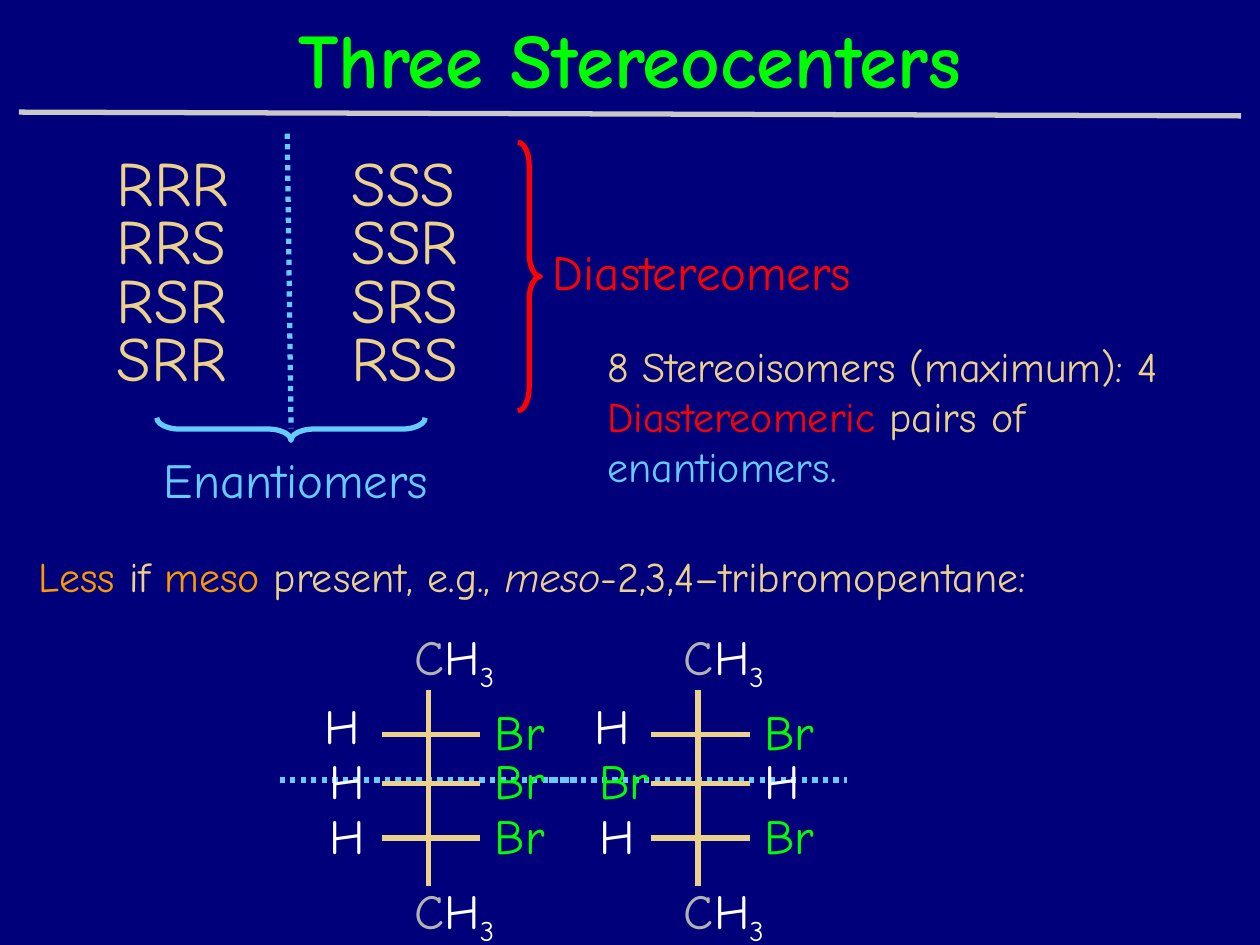
import dataclasses

import pptx
import pptx.dml.color
import pptx.enum.dml
import pptx.enum.shapes
import pptx.enum.text
import pptx.util
from lxml import etree

COLUMNS, ROWS = 100, 75
UNIT = pptx.util.Inches(10) / COLUMNS
DRAWING_NS = "http://schemas.openxmlformats.org/drawingml/2006/main"


@dataclasses.dataclass(frozen=True)
class Theme:
    font: str = "Comic Neue"
    background: str = "00007A"
    body: str = "EBD189"
    green: str = "00FF00"
    red: str = "FF0000"
    blue: str = "66CCFF"
    orange: str = "FF9900"
    white: str = "FFFFFF"
    carbon: str = "B2B2B2"
    rule: str = "C9C9C9"
    title_size: int = 44
    isomer_size: int = 36
    label_size: int = 28
    text_size: int = 24
    stroke: int = 3


THEME = Theme()


@dataclasses.dataclass(frozen=True)
class Box:
    """A region measured in grid columns and rows."""
    left: float
    top: float
    width: float
    height: float

    def inner(self, left, top, width, height):
        return Box(self.left + left, self.top + top, width, height)

    def point(self, x, y):
        return grid(self.left + x), grid(self.top + y)

    def emu(self):
        return [grid(v) for v in (self.left, self.top, self.width, self.height)]


def grid(cells):
    return pptx.util.Emu(round(cells * UNIT))


def rgb(color):
    return pptx.dml.color.RGBColor.from_string(color)


def style_line(line, color):
    line.color.rgb = rgb(color)
    line.width = pptx.util.Pt(THEME.stroke)


def style_font(font, size, color):
    font.name = THEME.font
    font.size = pptx.util.Pt(size)
    font.color.rgb = rgb(color)


def add_text(shapes, box, size, color, *pieces):
    """Each piece is plain text or (text, colour, style), style being "", "italic" or "sub"."""
    frame = shapes.add_textbox(*box.emu()).text_frame
    frame.word_wrap = True
    frame.auto_size = pptx.enum.text.MSO_AUTO_SIZE.SHAPE_TO_FIT_TEXT
    paragraph = frame.paragraphs[0]
    style_font(paragraph.font, size, color)
    for piece in pieces:
        text, run_color, style = (piece, color, "") if isinstance(piece, str) else piece
        run = paragraph.add_run()
        run.text = text
        if run_color != color:
            run.font.color.rgb = rgb(run_color)
        if style == "italic":
            run.font.italic = True
        elif style == "sub":
            run._r.get_or_add_rPr().set("baseline", "-25000")


def add_line(shapes, box, start, end, color, dotted=False):
    connector = shapes.add_connector(
        pptx.enum.shapes.MSO_CONNECTOR.STRAIGHT, *box.point(*start), *box.point(*end))
    style_line(connector.line, color)
    if dotted:
        connector.line.dash_style = pptx.enum.dml.MSO_LINE.ROUND_DOT
    etree.SubElement(connector._element.spPr, f"{{{DRAWING_NS}}}effectLst")


def add_brace(shapes, box, color, pointing_down=False):
    brace = shapes.add_shape(pptx.enum.shapes.MSO_SHAPE.RIGHT_BRACE, *box.emu())
    brace.adjustments[0], brace.adjustments[1] = 1.01, 0.5
    brace.shadow.inherit = False
    brace.fill.background()
    style_line(brace.line, color)
    if pointing_down:
        brace.rotation = 90
        brace._element.spPr.xfrm.set("flipV", "1")


def header(slide, box):
    title = slide.shapes.title
    title.left, title.top, title.width, title.height = box.emu()
    frame = title.text_frame
    frame.text = "Three Stereocenters"
    frame.auto_size = pptx.enum.text.MSO_AUTO_SIZE.NONE
    frame.vertical_anchor = pptx.enum.text.MSO_ANCHOR.MIDDLE
    paragraph = frame.paragraphs[0]
    paragraph.alignment = pptx.enum.text.PP_ALIGN.CENTER
    style_font(paragraph.font, THEME.title_size, THEME.green)
    paragraph.font.bold = True
    add_line(slide.shapes, box, (-6, 10.6), (91, 10.9), THEME.rule)


def stereoisomers(slide, box):
    """Mirror-image pairs in two columns, with braces naming the relationships."""
    pairs = [("RRR", "SSS"), ("RRS", "SSR"), ("RSR", "SRS"), ("SRR", "RSS")]
    for row, pair in enumerate(pairs):
        for column, isomer in enumerate(pair):
            cell = box.inner(18.6 * column, 0.3 + 4.63 * row, 14, 7)
            add_text(slide.shapes, cell, THEME.isomer_size, THEME.body, isomer)
    add_line(slide.shapes, box, (14.5, 0), (14.8, 23.4), THEME.blue, dotted=True)
    add_brace(slide.shapes, box.inner(32.8, 0.7, 1.8, 21.3), THEME.red)
    add_text(slide.shapes, box.inner(34.6, 8.1, 48.6, 5.7),
             THEME.label_size, THEME.red, "Diastereomers")
    add_brace(slide.shapes, box.inner(13.9, 12.8, 1.8, 21.3), THEME.blue, pointing_down=True)
    add_text(slide.shapes, box.inner(3.7, 24.6, 27.5, 5.7),
             THEME.label_size, THEME.blue, "Enantiomers")


def isomer_count(slide, box):
    add_text(slide.shapes, box, THEME.text_size, THEME.body,
             "8 Stereoisomers (maximum): 4 ", ("Diastereomeric", THEME.red, ""),
             " pairs of ", ("enantiomers.", THEME.blue, ""))


def meso_note(slide, box):
    add_text(slide.shapes, box, THEME.text_size, THEME.body,
             ("Less", THEME.orange, ""), " if ", ("meso", THEME.orange, ""),
             " present, e.g., ", ("meso", THEME.body, "italic"), "-2,3,4–tribromopentane:")


def fischer_projection(slide, box, substituents):
    """Substituents are (left, right) atoms for each stereocenter, from the top."""
    shapes = slide.shapes.add_group_shape().shapes
    atom_colors = {"H": THEME.white, "Br": THEME.green}
    bond_rows = (9.1, 13, 17.3)
    label_rows = ((5.5, 6), (9.9, 9.9), (14.2, 14.2))
    left_columns = (2.6, 3, 3)

    add_line(shapes, box, (0, 12.7), (23.6, 12.7), THEME.blue, dotted=True)
    add_line(shapes, box, (11.8, 5.6), (11.8, 21.1), THEME.body)
    for top in (0, 20.2):
        add_text(shapes, box.inner(9.7, top, 10.5, 5.7), THEME.label_size, THEME.white,
                 ("C", THEME.carbon, ""), "H", ("3", THEME.white, "sub"))
    for atoms, bond, tops, left in zip(substituents, bond_rows, label_rows, left_columns):
        add_line(shapes, box, (8.1, bond), (15.9, bond), THEME.body)
        for atom, top, column in zip(atoms, tops, (left, 16.1)):
            add_text(shapes, box.inner(column, top, 10.5, 5.7),
                     THEME.label_size, atom_colors[atom], atom)


def main():
    deck = pptx.Presentation()
    deck.slide_width, deck.slide_height = grid(COLUMNS), grid(ROWS)
    slide = deck.slides.add_slide(deck.slide_layouts[5])
    slide.background.fill.solid()
    slide.background.fill.fore_color.rgb = rgb(THEME.background)

    header(slide, Box(7.5, -1.7, 85, 12.5))
    stereoisomers(slide, Box(8.3, 10.6, 83.2, 30.3))
    isomer_count(slide, Box(47.2, 26.5, 47.9, 13))
    meso_note(slide, Box(2.1, 43.2, 97.9, 5))
    molecules = [
        [("H", "Br"), ("H", "Br"), ("H", "Br")],
        [("H", "Br"), ("Br", "H"), ("H", "Br")],
    ]
    for index, substituents in enumerate(molecules):
        fischer_projection(slide, Box(22.2 + 21.4 * index, 49.2, 23.6, 25.9), substituents)
    deck.save("out.pptx")


if __name__ == "__main__":
    main()
